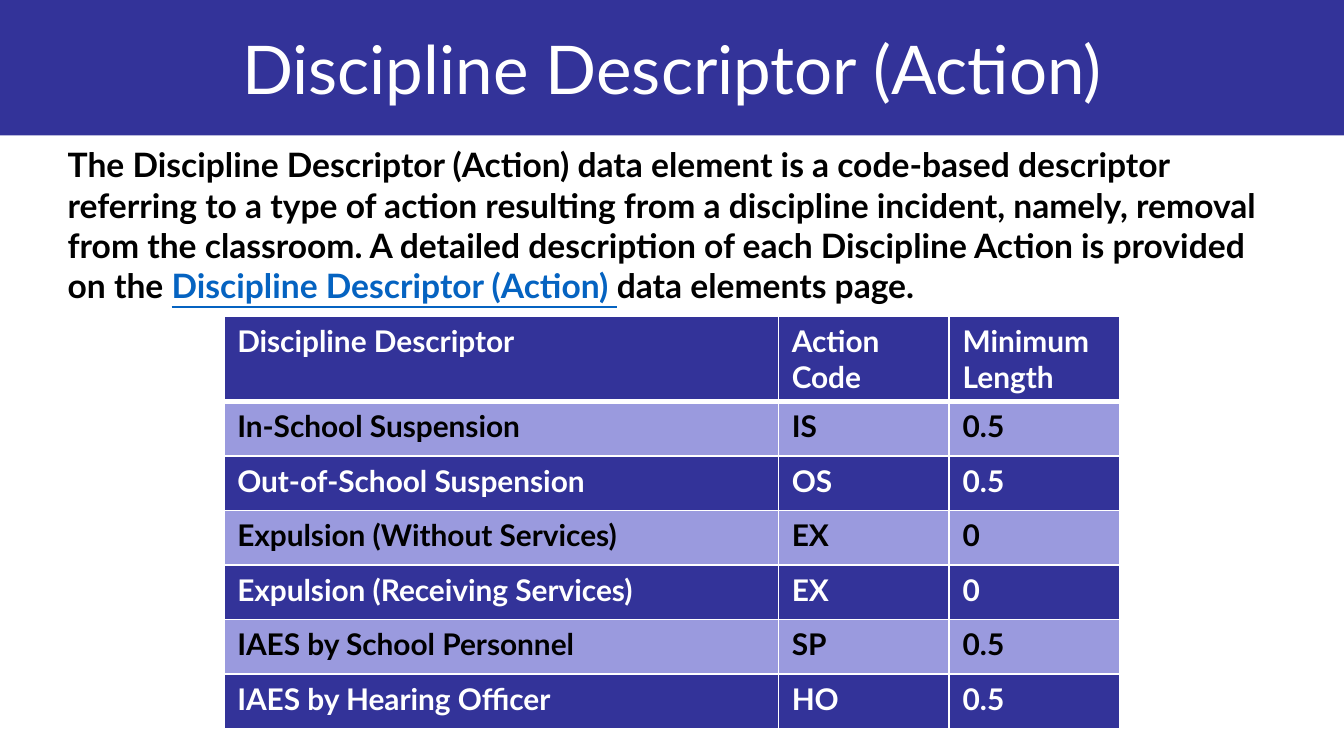
from lxml.etree import SubElement
from pptx import Presentation
from pptx.dml.color import RGBColor
from pptx.enum.shapes import MSO_SHAPE
from pptx.enum.text import MSO_ANCHOR, PP_ALIGN
from pptx.oxml.ns import qn
from pptx.util import Cm, Pt

# Content
TITLE = "Discipline Descriptor (Action)"
INTRO = (
    "The Discipline Descriptor (Action) data element is a code-based descriptor "
    "referring to a type of action resulting from a discipline incident, namely, "
    "removal from the classroom. A detailed description of each Discipline Action "
    "is provided on the "
)
LINK_TEXT = "Discipline Descriptor (Action) "
INTRO_END = "data elements page."
ROWS = [
    ("Discipline Descriptor", "Action Code", "Minimum Length"),
    ("In-School Suspension", "IS", "0.5"),
    ("Out-of-School Suspension", "OS", "0.5"),
    ("Expulsion (Without Services)", "EX", "0"),
    ("Expulsion (Receiving Services)", "EX", "0"),
    ("IAES by School Personnel", "SP", "0.5"),
    ("IAES by Hearing Officer", "HO", "0.5"),
]

# Format
FONT = "Lato"
NAVY, LILAC, WHITE, BLACK, LINK = "333399", "9A9ADE", "FFFFFF", "000000", "0563C1"
WIDTH, HEIGHT, BAR_HEIGHT = 25.4, 14.29, 2.56
COL_WIDTHS = (10.48, 3.23, 3.23)
ROW_HEIGHT = 1.03


def rgb(value):
    return RGBColor.from_string(value)


def add_text(p, text, size=18, color=BLACK, bold=False, underline=False):
    r = p.add_run()
    r.text = text
    r.font.name = FONT
    r.font.size = Pt(size)
    r.font.color.rgb = rgb(color)
    r.font.bold = bold
    r.font.underline = underline


def add_box(s, left, top, width, height, anchor=MSO_ANCHOR.TOP):
    tf = s.shapes.add_textbox(Cm(left), Cm(top), Cm(width), Cm(height)).text_frame
    tf.word_wrap = True
    tf.vertical_anchor = anchor
    return tf.paragraphs[0]


def set_border(cell, side, width):
    tc_pr = cell._tc.get_or_add_tcPr()
    ln = SubElement(tc_pr, qn(f"a:ln{side}"), w=str(Pt(width)))
    fill = SubElement(ln, qn("a:solidFill"))
    SubElement(fill, qn("a:srgbClr"), val=WHITE)


prs = Presentation()
prs.slide_width, prs.slide_height = Cm(WIDTH), Cm(HEIGHT)
s = prs.slides.add_slide(prs.slide_layouts[6])

# Title bar
bar = s.shapes.add_shape(MSO_SHAPE.RECTANGLE, Cm(-0.03), 0, Cm(WIDTH + 0.03), Cm(BAR_HEIGHT))
bar.shadow.inherit = False
bar.fill.solid()
bar.fill.fore_color.rgb = rgb(NAVY)
bar.line.fill.background()
p = add_box(s, 0, 0, WIDTH, BAR_HEIGHT, MSO_ANCHOR.MIDDLE)
p.alignment = PP_ALIGN.CENTER
add_text(p, TITLE, size=36, color=WHITE)

# Introduction
p = add_box(s, 1.03, 2.6, 23.32, 2.56)
add_text(p, INTRO, bold=True)
add_text(p, LINK_TEXT, color=LINK, bold=True, underline=True)
add_text(p, INTRO_END, bold=True)

# Table of action codes
table_width = sum(COL_WIDTHS)
table = s.shapes.add_table(
    len(ROWS), len(COL_WIDTHS), Cm((WIDTH - table_width) / 2), Cm(5.98),
    Cm(table_width), Cm(ROW_HEIGHT * len(ROWS)),
).table
for column, width in zip(table.columns, COL_WIDTHS):
    column.width = Cm(width)
for i, row in enumerate(ROWS):
    table.rows[i].height = Cm(ROW_HEIGHT)
    fill, color = (LILAC, BLACK) if i % 2 else (NAVY, WHITE)
    borders = {"L": 1, "R": 1, "T": 3 if i == 1 else 1, "B": 3 if i == 0 else 1}
    for j, text in enumerate(row):
        cell = table.cell(i, j)
        for side, width in borders.items():
            set_border(cell, side, width)
        cell.fill.solid()
        cell.fill.fore_color.rgb = rgb(fill)
        add_text(cell.text_frame.paragraphs[0], text, size=16, color=color, bold=True)

prs.save("out.pptx")
